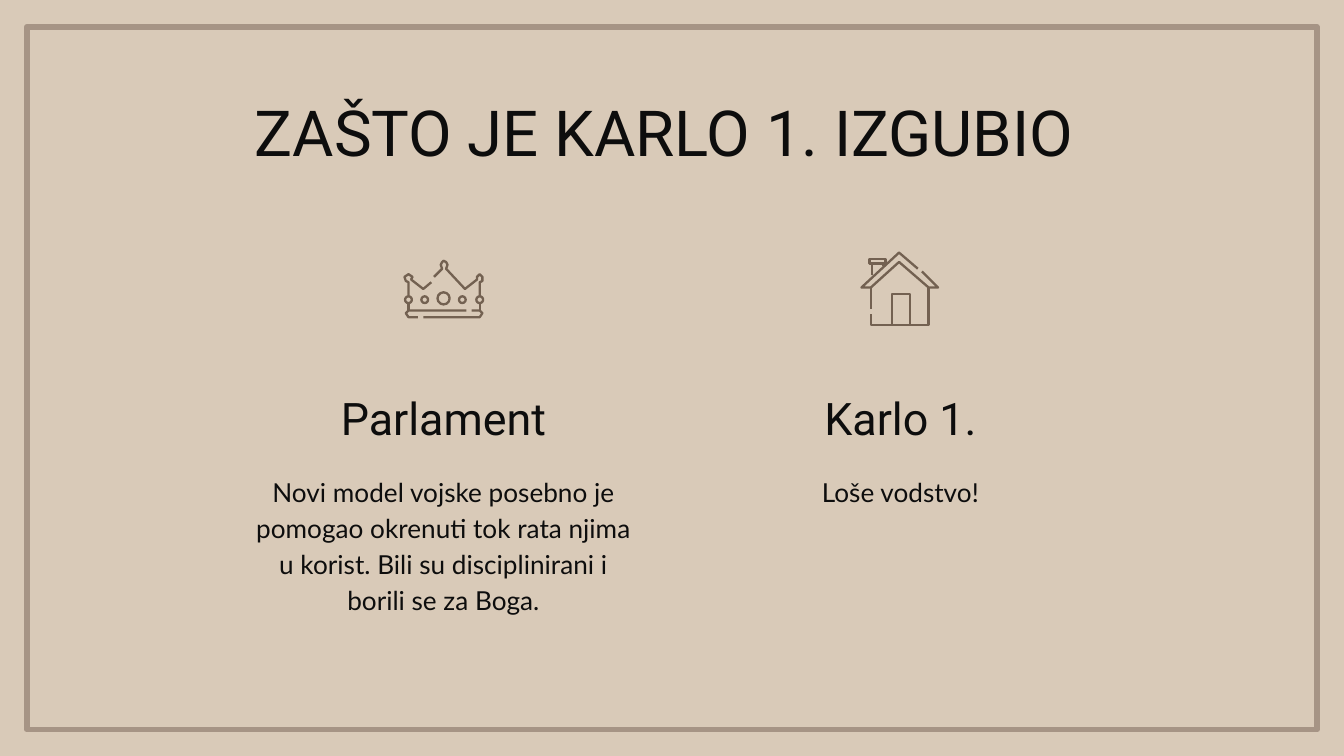
from math import cos, pi, sin

from pptx import Presentation
from pptx.dml.color import RGBColor
from pptx.enum.shapes import MSO_SHAPE
from pptx.enum.text import MSO_ANCHOR, MSO_AUTO_SIZE, PP_ALIGN
from pptx.util import Inches, Pt

RECT, OVAL = MSO_SHAPE.RECTANGLE, MSO_SHAPE.OVAL
TOP, BOTTOM = MSO_ANCHOR.TOP, MSO_ANCHOR.BOTTOM
CENTER, FIXED = PP_ALIGN.CENTER, MSO_AUTO_SIZE.NONE

COLORS = {"back": "D9CAB8", "frame": "A69485", "icon": "736151", "text": "0D0D0D"}
TITLE = "ZAŠTO JE KARLO 1. IZGUBIO "
SIDES = [
    ("Parlament", "Novi model vojske posebno je pomogao okrenuti tok rata njima "
                  "u korist. Bili su disciplinirani i borili se za Boga."),
    ("Karlo 1.", "Loše vodstvo!"),
]


def ring(x, y, size, sides=16):
    turns = [2 * pi * step / sides for step in range(sides + 1)]
    return [(x + size / 2 * cos(turn), y + size / 2 * sin(turn)) for turn in turns]


LEFT = [
    [(3.21, 2.1), (3.15, 2.15), (3.06, 2.08), (3.07, 2.06), (3.04, 2.04),
     (3.01, 2.06), (3.02, 2.09), (3.04, 2.1), (3.04, 2.21)],
    ring(3.04, 2.23, 0.05),
    [(3.04, 2.26), (3.04, 2.31)],
    [(3.47, 2.31), (3.04, 2.31), (3.02, 2.33), (3.04, 2.36), (3.11, 2.36)],
]
RIGHT = [
    [(3.23, 2.06), (3.29, 2), (3.28, 1.97), (3.29, 1.95), (3.3, 1.94),
     (3.32, 1.95), (3.33, 1.97), (3.32, 2), (3.46, 2.15), (3.55, 2.08),
     (3.55, 2.06), (3.57, 2.04), (3.59, 2.06), (3.59, 2.09), (3.57, 2.1),
     (3.57, 2.21)],
    ring(3.57, 2.23, 0.05),
    [(3.57, 2.26), (3.57, 2.31)],
    [(3.51, 2.31), (3.57, 2.31), (3.59, 2.33), (3.57, 2.36), (3.15, 2.36)],
]
HOUSE = [
    [(6.83, 2), (6.69, 1.88), (6.41, 2.14), (6.48, 2.14), (6.69, 1.95),
     (6.91, 2.14), (6.98, 2.14), (6.86, 2.02)],
    [(6.49, 2.05), (6.49, 1.96)],
    [(6.57, 1.98), (6.57, 1.96)],
    [(6.59, 1.96), (6.47, 1.96), (6.47, 1.93), (6.59, 1.93), (6.59, 1.96)],
    [(6.48, 2.14), (6.48, 2.3)],
    [(6.48, 2.34), (6.48, 2.42), (6.91, 2.42), (6.91, 2.14)],
    [(6.64, 2.42), (6.64, 2.19), (6.77, 2.19), (6.77, 2.42)],
]
GEMS = [(3.3, 2.22, 0.09), (3.16, 2.23, 0.05), (3.44, 2.23, 0.05)]


def color(name):
    return RGBColor.from_string(COLORS[name])


def outline(shape, name, width):
    shape.shadow.inherit = False
    shape.fill.background()
    shape.line.color.rgb = color(name)
    shape.line.width = Pt(width)


def draw(lines):
    paths = [[(Inches(x), Inches(y)) for x, y in line] for line in lines]
    pen = slide.shapes.build_freeform(*paths[0][0], scale=1)
    pen.add_line_segments(paths[0][1:], close=False)
    for start, *rest in paths[1:]:
        pen.move_to(*start)
        pen.add_line_segments(rest, close=False)
    outline(pen.convert_to_shape(), "icon", 1.25)


def write(box, text, font, size, anchor=TOP, space=1.0):
    frame = box.text_frame
    frame.text = text
    frame.word_wrap = True
    frame.auto_size = FIXED
    frame.vertical_anchor = anchor
    frame.margin_left = frame.margin_right = Inches(0.1)
    frame.margin_top = frame.margin_bottom = Inches(0.1)
    para = frame.paragraphs[0]
    para.alignment = CENTER
    para.line_spacing = space
    para.space_before = Pt(0)
    para.font.name = font
    para.font.size = Pt(size)
    para.font.color.rgb = color("text")


deck = Presentation()
deck.slide_width = Inches(10)
deck.slide_height = deck.slide_width * 9 // 16
slide = deck.slides.add_slide(deck.slide_layouts[5])
slide.background.fill.solid()
slide.background.fill.fore_color.rgb = color("back")

border = slide.shapes.add_shape(RECT, *map(Inches, (0.2, 0.2, 9.6, 5.23)))
outline(border, "frame", 3)

title = slide.shapes.title
title.left, title.top = Inches(0.78), Inches(0.59)
title.width, title.height = Inches(8.44), Inches(0.7)
write(title, TITLE, "Roboto", 34)

for index, (head, body) in enumerate(SIDES):
    left = 1.8 + 3.4 * index
    box = slide.shapes.add_textbox(*map(Inches, (left, 2.81, 3, 0.6)))
    write(box, head, "Roboto", 24, BOTTOM, 1.15)
    box = slide.shapes.add_textbox(*map(Inches, (left, 3.41, 3, 1.3)))
    write(box, body, "Lato", 14, TOP, 1.15)

for lines in (LEFT, RIGHT, HOUSE):
    draw(lines)
for x, y, size in GEMS:
    place = (x - size / 2, y - size / 2, size, size)
    outline(slide.shapes.add_shape(OVAL, *map(Inches, place)), "icon", 1.25)

deck.save("out.pptx")
